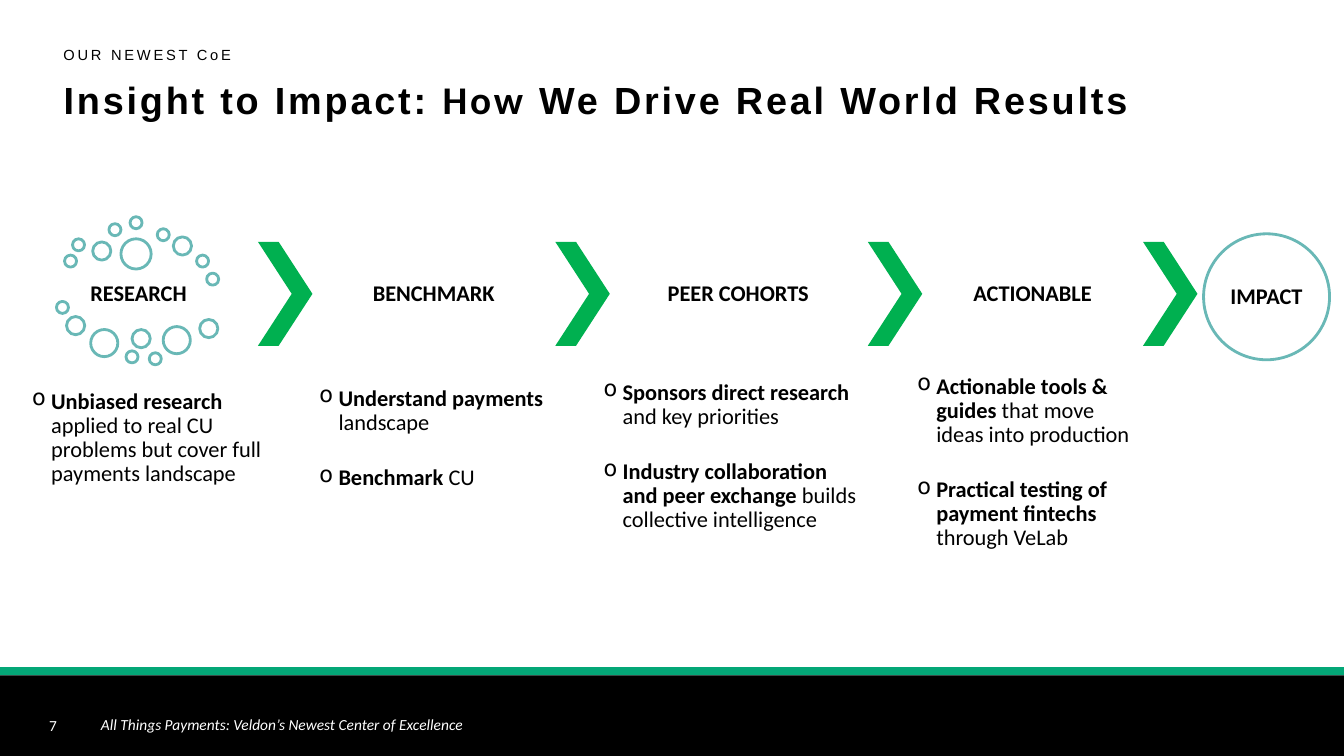
import lxml.etree
import pptx
import pptx.dml.color
import pptx.enum.shapes
import pptx.enum.text
import pptx.oxml.ns
import pptx.util

Pt = pptx.util.Pt
SHAPES = pptx.enum.shapes.MSO_SHAPE
ALIGN = pptx.enum.text.PP_ALIGN
ANCHOR = pptx.enum.text.MSO_ANCHOR

BLACK, WHITE, TEAL = "000000", "FFFFFF", "69B8B6"
LABEL = {"size": Pt(16), "name": "Calibri", "bold": True}
BODY = {"size": Pt(16), "name": "Calibri", "bold": False}
HEADING = {"size": Pt(27), "name": "Arial", "bold": True}
EYEBROW = {"size": Pt(10.5), "name": "Arial"}
FOOTER = {"size": Pt(11), "name": "Calibri"}

# Bubble diameter -> left and top of each bubble around RESEARCH
BUBBLES = {
    8.6: [(46.1, 182.2), (51.8, 170.6), (77.8, 159.8), (92.9, 154.8), (112.3, 163.4),
          (140.4, 182.2), (147.6, 195.1), (40.3, 215.3), (90, 250.6), (106.6, 252)],
    13: [(66.2, 172.8), (123.8, 169.2), (47.5, 226.1), (94.3, 235.4), (142.6, 228.2)],
    19.4: [(64.8, 235.4), (116.6, 233.3)],
    21.6: [(86.4, 170.6)],
}

# Stage: label, label left, chevron left, list box (left, top, width), bullets (bold, plain)
STAGES = [
    ("RESEARCH", 46.1, 184.3, (21.6, 277.2, 169.9),
     [("Unbiased research ", "applied to real CU problems but cover full payments landscape")]),
    ("BENCHMARK", 257, 396.7, (226.8, 275, 173.5),
     [("Understand payments ", "landscape"), ("Benchmark", " CU")]),
    ("PEER COHORTS", 474.5, 619.9, (429.8, 270.7, 185),
     [("Sponsors direct research ", "and key priorities"),
      ("Industry collaboration and peer exchange ", "builds collective intelligence")]),
    ("ACTIONABLE", 684.7, 816.5, (653.8, 266.4, 157),
     [("Actionable tools & guides ", "that move ideas into production"),
      ("Practical testing of payment fintechs ", "through VeLab")]),
]


def color(hex_value):
    return pptx.dml.color.RGBColor.from_string(hex_value)


def set_attributes(target, values):
    for name, value in values.items():
        setattr(target, name, value)


def add_run(paragraph, text, font, hex_value=BLACK, spacing=0):
    run = paragraph.add_run()
    run.text = text
    set_attributes(run.font, font)
    run.font.color.rgb = color(hex_value)
    if spacing:
        run._r.get_or_add_rPr().set("spc", str(spacing * 100))


def place(shape, left, top, width, height):
    set_attributes(shape, {"left": Pt(left), "top": Pt(top),
                           "width": Pt(width), "height": Pt(height)})


def set_frame(shape, anchor=ANCHOR.TOP, margin=None):
    frame = shape.text_frame
    values = {"word_wrap": True, "vertical_anchor": anchor,
              "auto_size": pptx.enum.text.MSO_AUTO_SIZE.NONE}
    if margin is not None:
        sides = ("left", "right", "top", "bottom")
        values.update({f"margin_{side}": Pt(margin) for side in sides})
    set_attributes(frame, values)
    return frame


def add_box(slide, box, anchor=ANCHOR.TOP, margin=None):
    return set_frame(slide.shapes.add_textbox(*map(Pt, box)), anchor, margin)


def add_figure(slide, kind, box, fill, line=None):
    figure = slide.shapes.add_shape(kind, *map(Pt, box))
    figure.shadow.inherit = False
    figure.fill.solid()
    figure.fill.fore_color.rgb = color(fill)
    if line:
        figure.line.color.rgb = color(line)
        figure.line.width = Pt(2)
    else:
        figure.line.fill.background()
    return figure


def write_label(frame, text):
    paragraph = frame.paragraphs[0]
    set_attributes(paragraph, {"alignment": ALIGN.CENTER, "line_spacing": 0.9})
    add_run(paragraph, text, LABEL)


def add_bullets(slide, left, top, width, bullets):
    frame = add_box(slide, (left, top, width, 66), margin=1.4)
    for index, (lead, rest) in enumerate(bullets):
        paragraph = frame.add_paragraph() if index else frame.paragraphs[0]
        properties = paragraph._p.get_or_add_pPr()
        properties.set("marL", str(Pt(13.6)))
        properties.set("indent", str(-Pt(13.6)))
        mark = lxml.etree.SubElement(properties, pptx.oxml.ns.qn("a:buChar"))
        mark.set("char", "o")
        paragraph.line_spacing = 0.9
        if index:
            paragraph.space_before = Pt(22)
        add_run(paragraph, lead, LABEL)
        add_run(paragraph, rest, BODY)


def add_heading(slide):
    title = slide.shapes.title
    place(title, 38.2, 50.4, 910, 42.5)
    paragraph = set_frame(title).paragraphs[0]
    paragraph.alignment = ALIGN.LEFT
    add_run(paragraph, "Insight to Impact: ", HEADING, spacing=2)
    add_run(paragraph, "How", {**HEADING, "size": Pt(28), "name": "Calibri"}, spacing=2)
    add_run(paragraph, " We Drive Real World Results", HEADING, spacing=2)
    eyebrow = add_box(slide, (38.2, 20.2, 371.5, 28.8), ANCHOR.BOTTOM)
    add_run(eyebrow.paragraphs[0], "OUR NEWEST CoE", EYEBROW, spacing=2)


def add_footer(slide):
    add_figure(slide, SHAPES.RECTANGLE, (0, 476.6, 960, 5.8), "04A777")
    add_figure(slide, SHAPES.RECTANGLE, (0, 482.4, 960, 57.6), BLACK)
    number = add_box(slide, (28, 505.4, 36, 25.2), ANCHOR.MIDDLE)
    add_run(number.paragraphs[0], "7", FOOTER, WHITE)
    note = add_box(slide, (65, 507.6, 541, 25.2))
    add_run(note.paragraphs[0], "All Things Payments: Veldon’s Newest Center of Excellence",
            {**FOOTER, "italic": True}, WHITE)


def main():
    deck = pptx.Presentation()
    set_attributes(deck, {"slide_width": Pt(960), "slide_height": Pt(540)})
    slide = deck.slides.add_slide(deck.slide_layouts[5])
    add_footer(slide)
    add_heading(slide)

    # Bubbles around the first stage
    for diameter, corners in BUBBLES.items():
        for left, top in corners:
            add_figure(slide, SHAPES.OVAL, (left, top, diameter, diameter), WHITE, TEAL)

    # Stages, each followed by a chevron
    for label, label_left, chevron_left, list_box, bullets in STAGES:
        write_label(add_box(slide, (label_left, 172.8, 105.8, 74.2), ANCHOR.MIDDLE, 1.4), label)
        add_bullets(slide, *list_box, bullets)
        chevron = add_figure(slide, SHAPES.CHEVRON, (chevron_left, 172.8, 38.9, 74.2), "00B050")
        chevron.adjustments[0] = 0.62

    # Final result
    impact = add_figure(slide, SHAPES.OVAL, (859.7, 167, 90, 90), WHITE, TEAL)
    write_label(set_frame(impact, ANCHOR.MIDDLE, 0), "IMPACT")

    deck.save("out.pptx")


if __name__ == "__main__":
    main()
